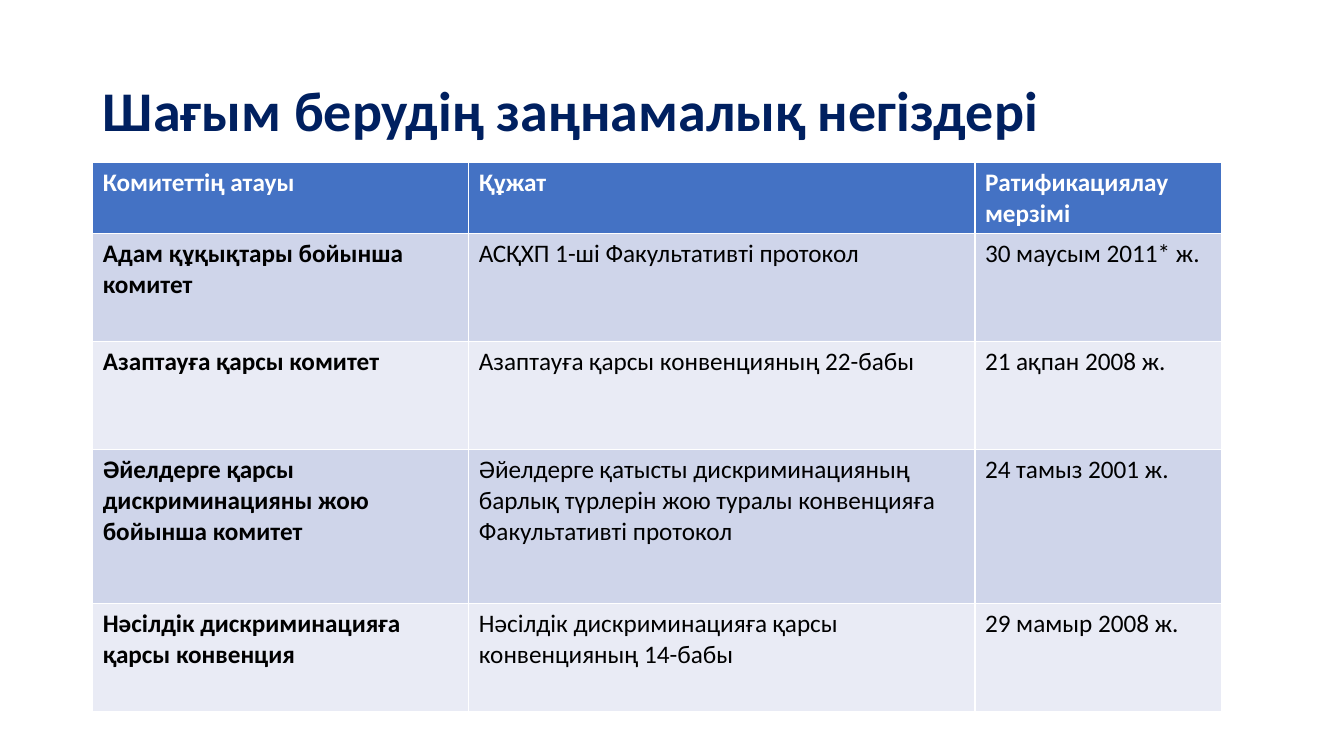
from pptx import Presentation
from pptx.dml.color import RGBColor
from pptx.enum.text import MSO_ANCHOR, PP_ALIGN
from pptx.util import Inches, Pt

COLORS = {
    "title": "002060",
    "header": "4472C4",
    "header_text": "FFFFFF",
    "body_text": "000000",
    "odd_row": "CFD5EA",
    "even_row": "E9EBF5",
}
FONT = "Calibri"
TITLE = "Шағым берудің заңнамалық негіздері"
TITLE_BOX = (0.92, 0.4, 11.5, 1.45)
TABLE_BOX = (0.92, 1.61, 11.2, 5.45)
COLUMN_WIDTHS = (3.73, 5.02, 2.45)
ROW_HEIGHTS = (0.71, 1.07, 1.07, 1.53, 1.07)
COMMITTEES = [
    ("Комитеттің атауы", "Құжат", "Ратификациялау мерзімі"),
    ("Адам құқықтары бойынша комитет",
     "АСҚХП 1-ші Факультативті протокол",
     "30 маусым 2011* ж."),
    ("Азаптауға қарсы комитет",
     "Азаптауға қарсы конвенцияның 22-бабы",
     "21 ақпан 2008 ж."),
    ("Әйелдерге қарсы дискриминацияны жою бойынша комитет",
     "Әйелдерге қатысты дискриминацияның барлық түрлерін жою туралы "
     "конвенцияға Факультативті протокол",
     "24 тамыз 2001 ж."),
    ("Нәсілдік дискриминацияға қарсы конвенция",
     "Нәсілдік дискриминацияға қарсы конвенцияның 14-бабы",
     "29 мамыр 2008 ж."),
]


def color(name):
    return RGBColor.from_string(COLORS[name])


def format_text(para, size, color_name, bold):
    for span in para.runs:
        span.font.name = FONT
        span.font.size = Pt(size)
        span.font.bold = bold
        span.font.color.rgb = color(color_name)


def place_title(page, box):
    title = page.shapes.title
    title.left, title.top, title.width, title.height = map(Inches, box)
    frame = title.text_frame
    frame.text = TITLE
    frame.word_wrap = True
    frame.vertical_anchor = MSO_ANCHOR.MIDDLE
    para = frame.paragraphs[0]
    para.alignment = PP_ALIGN.LEFT
    para.line_spacing = 0.9
    format_text(para, 40, "title", True)


def fill_cell(cell, text, row, column):
    is_header = row == 0
    band = "header" if is_header else "odd_row" if row % 2 else "even_row"
    cell.fill.solid()
    cell.fill.fore_color.rgb = color(band)
    cell.text_frame.text = text
    text_color = "header_text" if is_header else "body_text"
    format_text(cell.text_frame.paragraphs[0], 18, text_color,
                is_header or column == 0)


def place_table(page, box):
    shape = page.shapes.add_table(len(ROW_HEIGHTS), len(COLUMN_WIDTHS),
                                  *map(Inches, box))
    table = shape.table
    for column, width in zip(table.columns, COLUMN_WIDTHS):
        column.width = Inches(width)
    for row, height in zip(table.rows, ROW_HEIGHTS):
        row.height = Inches(height)
    for row, texts in enumerate(COMMITTEES):
        for column, text in enumerate(texts):
            fill_cell(table.cell(row, column), text, row, column)


def main():
    deck = Presentation()
    deck.slide_width, deck.slide_height = Inches(13.33), Inches(7.5)
    page = deck.slides.add_slide(deck.slide_layouts.get_by_name("Title Only"))
    place_title(page, TITLE_BOX)
    place_table(page, TABLE_BOX)
    deck.save("out.pptx")


if __name__ == "__main__":
    main()
